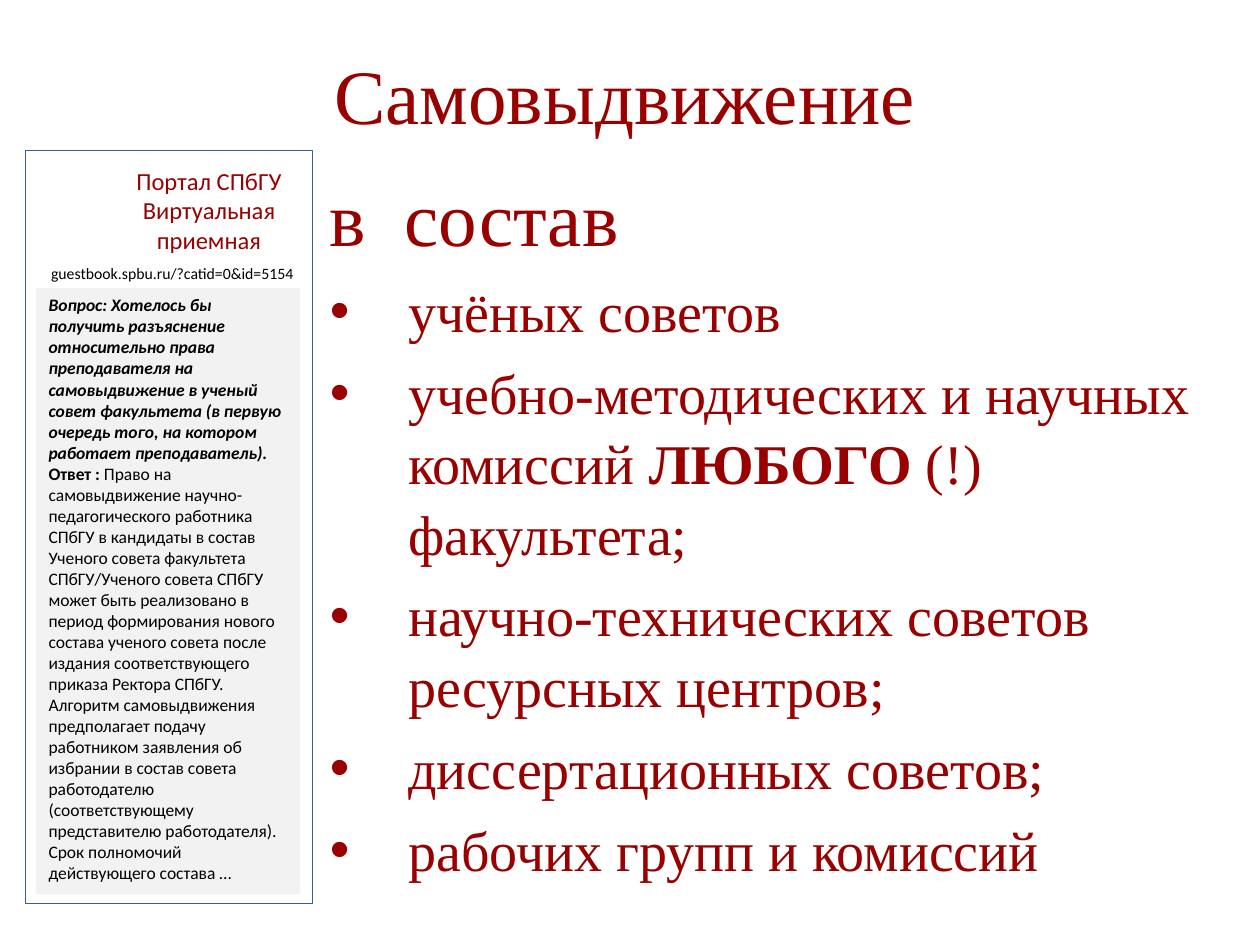
from dataclasses import dataclass

from lxml import etree
from pptx import Presentation
from pptx import util as u
from pptx.dml.color import RGBColor
from pptx.enum import dml, shapes, text
from pptx.oxml.ns import qn


@dataclass(frozen=True)
class Theme:
    accent: RGBColor = RGBColor(0x99, 0, 0)
    ink: RGBColor = RGBColor(0, 0, 0)
    border: RGBColor = RGBColor(0x3A, 0x5F, 0x8C)
    panel: RGBColor = RGBColor(0xF2, 0xF2, 0xF2)
    serif: str = "Times New Roman"
    sans: str = "Calibri"
    heading: int = 44
    body: int = 32
    portal: int = 14
    answer: int = 10
    link: int = 9


T = Theme()
HEADING = {"name": T.serif, "size": u.Pt(T.heading), "color": T.accent}
BODY = {**HEADING, "size": u.Pt(T.body)}
PORTAL = {"name": T.sans, "size": u.Pt(T.portal), "color": T.accent}
LINK = {"name": T.sans, "size": u.Pt(T.link), "color": T.ink}
ANSWER = {**LINK, "size": u.Pt(T.answer)}
BOLD = {"bold": True}
QUESTION = {"bold": True, "italic": True}

SERIF_PARAGRAPH = {"line_spacing": 1.05}
CENTRED = {"alignment": text.PP_ALIGN.CENTER}
LEFT = {"alignment": text.PP_ALIGN.LEFT}

ITEMS = [
    [("учёных советов", {})],
    [("учебно-методических и научных комиссий ", {}),
     ("ЛЮБОГО ", BOLD), ("(!) факультета;", {})],
    [("научно-технических советов ресурсных центров;", {})],
    [("диссертационных советов;", {})],
    [("рабочих групп и комиссий", {})],
]
QUESTION_TEXT = (
    "Вопрос: Хотелось бы получить разъяснение относительно права преподавателя "
    "на самовыдвижение в ученый совет факультета (в первую очередь того, на "
    "котором работает преподаватель)."
)
ANSWER_TEXT = (
    "Право на самовыдвижение научно-педагогического работника СПбГУ в кандидаты "
    "в состав Ученого совета факультета СПбГУ/Ученого совета СПбГУ может быть "
    "реализовано в период формирования нового состава ученого совета после "
    "издания соответствующего приказа Ректора СПбГУ. Алгоритм самовыдвижения "
    "предполагает подачу работником заявления об избрании в состав совета "
    "работодателю (соответствующему представителю работодателя). Срок полномочий "
    "действующего состава …"
)


def apply(target, values):
    for name, value in values.items():
        if name == "color":
            target.color.rgb = value
        else:
            setattr(target, name, value)


def add_paragraph(tf, index, runs, font, layout):
    p = tf.add_paragraph() if index else tf.paragraphs[0]
    apply(p, layout)
    for words, extra in runs:
        r = p.add_run()
        r.text = words
        apply(r.font, {**font, **extra})
    return p


def add_bullet(p, indent):
    pr = p._p.get_or_add_pPr()
    pr.set("marL", str(indent))
    pr.set("indent", str(-indent))
    etree.SubElement(pr, qn("a:buFont")).set("typeface", "Arial")
    etree.SubElement(pr, qn("a:buChar")).set("char", "•")


def add_text(s, box, paragraphs, font, layout):
    tf = s.shapes.add_textbox(*map(u.Cm, box)).text_frame
    tf.word_wrap = True
    for i, runs in enumerate(paragraphs):
        add_paragraph(tf, i, runs, font, layout)
    return tf


def add_rect(s, box):
    sp = s.shapes.add_shape(shapes.MSO_SHAPE.RECTANGLE, *map(u.Cm, box))
    sp.shadow.inherit = False
    return sp


def add_title(s, box):
    add_text(s, box, [[("Самовыдвижение", {})]], HEADING,
             {**SERIF_PARAGRAPH, **CENTRED})


def add_councils(s, box):
    tf = add_text(s, box, [[("в  состав", {})]], HEADING, SERIF_PARAGRAPH)
    layout = {**SERIF_PARAGRAPH, "space_before": u.Pt(T.body * 0.2)}
    for i, runs in enumerate(ITEMS, 1):
        add_bullet(add_paragraph(tf, i, runs, BODY, layout), u.Cm(1.58))


def add_portal_panel(s, box):
    x, y, w, h = box
    frame = add_rect(s, box)
    frame.fill.background()
    apply(frame.line, {"color": T.border, "width": u.Pt(0.25),
                       "dash_style": dml.MSO_LINE.ROUND_DOT})

    add_text(s, (x + 1.85, y + 0.2, 3.73, 2.06),
             [[("Портал СПбГУ", {})], [("Виртуальная приемная", {})]],
             PORTAL, CENTRED)
    add_text(s, (x + 0.28, y + 2.18, w - 0.38, 1.02),
             [[("guestbook.spbu.ru/?catid=0&id=5154", {})]], LINK, LEFT)

    sp = add_rect(s, (x + 0.23, y + 2.79, w - 0.48, h - 2.97))
    sp.fill.solid()
    sp.fill.fore_color.rgb = T.panel
    sp.line.fill.background()
    tf = sp.text_frame
    apply(tf, {"word_wrap": True, "vertical_anchor": text.MSO_ANCHOR.TOP})
    entries = [[(QUESTION_TEXT, QUESTION)],
               [("Ответ : ", BOLD), (ANSWER_TEXT, {})]]
    for i, runs in enumerate(entries):
        add_paragraph(tf, i, runs, ANSWER, LEFT)


def main():
    prs = Presentation()
    prs.slide_width, prs.slide_height = u.Cm(25.4), u.Cm(19.05)
    s = prs.slides.add_slide(prs.slide_layouts[6])
    add_title(s, (0.5, 0.74, 24.2, 2))
    add_councils(s, (6.4, 3.2, 18.2, 14.53))
    add_portal_panel(s, (0.5, 3.02, 5.8, 15.19))
    prs.save("out.pptx")


if __name__ == "__main__":
    main()
